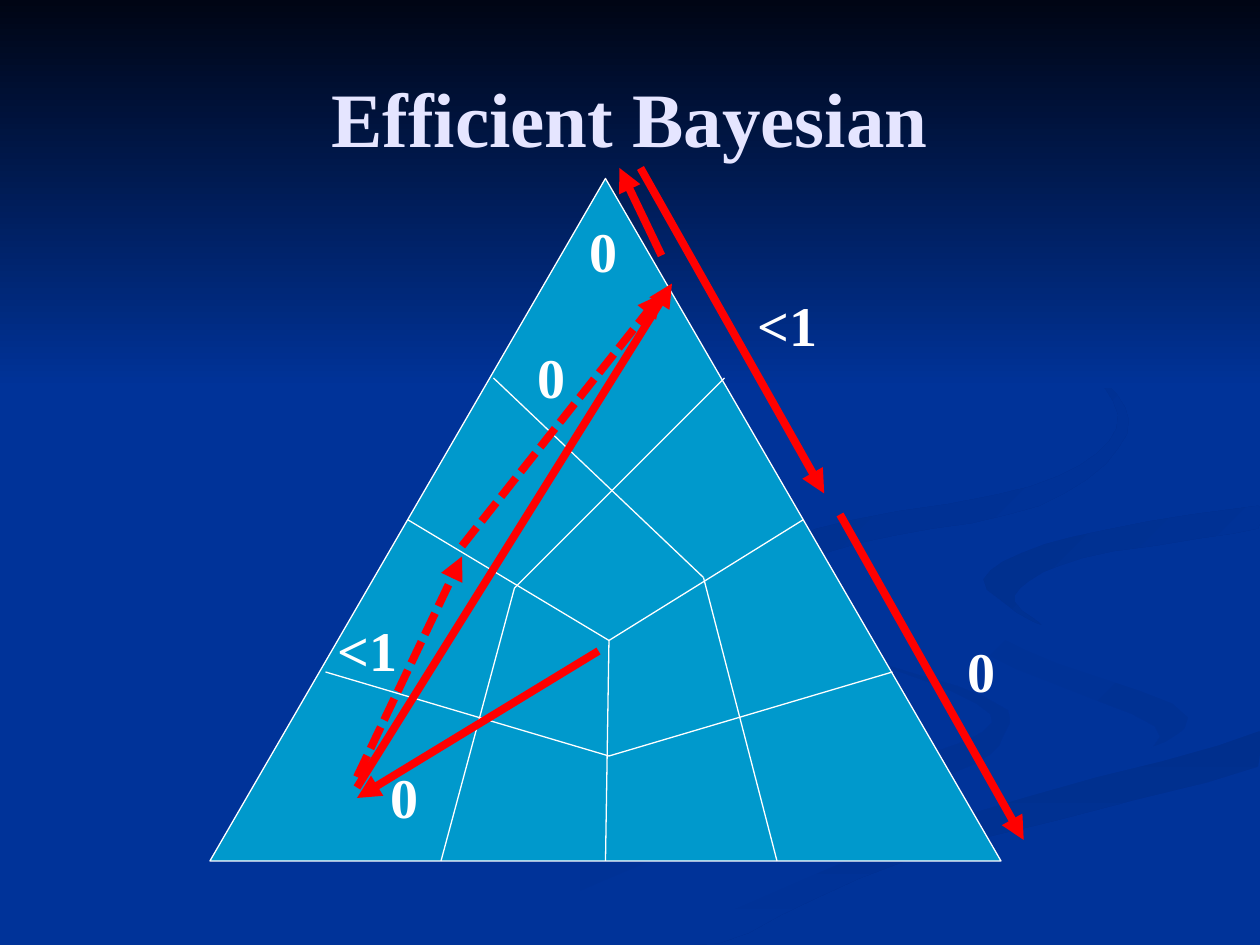
from itertools import pairwise

from lxml import etree
from pptx import Presentation
from pptx.dml.color import RGBColor
from pptx.enum.dml import MSO_LINE
from pptx.enum.shapes import MSO_CONNECTOR, MSO_SHAPE
from pptx.enum.text import MSO_ANCHOR, PP_ALIGN
from pptx.oxml.ns import qn
from pptx.util import Pt

STRAIGHT = MSO_CONNECTOR.STRAIGHT
TRIANGLE = MSO_SHAPE.ISOSCELES_TRIANGLE
RECTANGLE = MSO_SHAPE.RECTANGLE
DASHED = MSO_LINE.SQUARE_DOT
MIDDLE = MSO_ANCHOR.MIDDLE
LEFT, CENTER = PP_ALIGN.LEFT, PP_ALIGN.CENTER

FONT = "Times New Roman"
BLUE = RGBColor(0x00, 0x33, 0x99)
NIGHT = RGBColor(0x00, 0x05, 0x14)
SHADE_LIGHT = RGBColor(0x00, 0x31, 0x93)
SHADE_DARK = RGBColor(0x00, 0x2F, 0x8D)
TEAL = RGBColor(0x00, 0x99, 0xCC)
LAVENDER = RGBColor(0xE5, 0xE5, 0xFF)
WHITE = RGBColor(0xFF, 0xFF, 0xFF)
RED = RGBColor(0xFF, 0x00, 0x00)

# Each ribbon: first colour, last colour, clockwise angle, knots of its outline.
RIBBONS = [
    (BLUE, SHADE_LIGHT, 0, [
        (562, 398), (462, 365), (410, 337), (489, 374), (566, 408), (523, 433),
        (388, 467), (216, 539), (260, 539), (406, 479), (544, 442), (575, 417)]),
    (BLUE, SHADE_LIGHT, 45, [
        (679, 410), (626, 382), (536, 353), (521, 334), (562, 373), (660, 415),
        (644, 436)]),
    (SHADE_DARK, BLUE, 90, [
        (362, 539), (411, 539), (520, 491), (719, 438), (719, 418), (574, 459),
        (454, 499)]),
    (BLUE, BLUE, 0, [
        (522, 334), (585, 371), (679, 410), (607, 445), (446, 492), (343, 539),
        (374, 538), (551, 466), (719, 418), (719, 387), (599, 359), (562, 333),
        (612, 307), (719, 289), (719, 279), (567, 303)]),
    (SHADE_DARK, BLUE, 45, [
        (562, 331), (595, 357), (580, 340), (618, 319), (719, 302), (719, 289),
        (612, 307)]),
    (SHADE_DARK, BLUE, 45, [
        (492, 310), (594, 289), (644, 248), (622, 210), (549, 168), (616, 205),
        (638, 245), (589, 278), (467, 302), (415, 333), (448, 360), (428, 338)]),
]
CURVE_STEPS = 5

# Positions below are relative to the top left of the triangle's box.
CENTRE = (228, 264)
SEAMS = [
    [CENTRE, (339, 195)],
    [CENTRE, (113, 195)],
    [CENTRE, (226, 390)],
    [(294, 114), (174, 234), (132, 390)],
    [(66, 282), (228, 330), (390, 282)],
    [(162, 114), (282, 228), (324, 390)],
]
ARROWS = [
    ((222, 270), (84, 354), None),
    ((84, 342), (144, 216), DASHED),
    ((258, 44), (234, -6), None),
    ((246, -6), (351, 180), None),
    ((360, 192), (465, 378), None),
    ((144, 210), (258, 66), DASHED),
    ((84, 348), (264, 60), None),
]
LABELS = [
    ("0", 96, 330), ("0", 180, 90), ("<1", 66, 246),
    ("0", 210, 18), ("<1", 306, 60), ("0", 426, 258),
]
LABEL_WIDTHS = {"0": 31, "<1": 49}


def smooth_outline(knots, limits):
    """Closed Catmull-Rom curve through the knots, kept within the limits."""
    def blend(a, b, c, d, t):
        return b + t * (c - a + t * (2*a - 5*b + 4*c - d + t * (3*b - a - 3*c + d))) / 2

    points = []
    for index in range(len(knots)):
        near = [knots[(index + shift) % len(knots)] for shift in (-1, 0, 1, 2)]
        for step in range(CURVE_STEPS):
            points.append(tuple(
                min(limit, blend(*axis, step / CURVE_STEPS))
                for axis, limit in zip(zip(*near), limits)))
    return points


def paint(shape, first, last, angle):
    """Fill without outline; the angle runs clockwise from left to right."""
    shape.shadow.inherit = False
    shape.line.fill.background()
    if first == last:
        shape.fill.solid()
        shape.fill.fore_color.rgb = first
        return
    shape.fill.gradient()
    shape.fill.gradient_angle = -angle % 360
    for position, colour in enumerate((first, last)):
        stop = shape.fill.gradient_stops[position]
        stop.color.rgb = colour
        stop.position = position


def add_backdrop(page, left, top, width, height):
    page.background.fill.solid()
    page.background.fill.fore_color.rgb = BLUE
    for first, last, angle, knots in RIBBONS:
        outline = smooth_outline(knots, (width, height))
        points = [(left + x, top + y) for x, y in outline]
        builder = page.shapes.build_freeform(*points[0], scale=Pt(1))
        builder.add_line_segments(points[1:], close=True)
        paint(builder.convert_to_shape(), first, last, angle)
    sky = page.shapes.add_shape(RECTANGLE, Pt(left), Pt(top), Pt(width), Pt(222))
    paint(sky, NIGHT, BLUE, 90)


def add_text(page, text, left, top, width, height, size, colour, align, wrap):
    box = page.shapes.add_textbox(Pt(left), Pt(top), Pt(width), Pt(height))
    box.text_frame.word_wrap = wrap
    box.text_frame.vertical_anchor = MIDDLE
    para = box.text_frame.paragraphs[0]
    para.alignment = align
    span = para.add_run()
    span.text = text
    span.font.name = FONT
    span.font.size = Pt(size)
    span.font.bold = True
    span.font.color.rgb = colour


def add_line(page, left, top, start, end, colour, weight):
    line = page.shapes.add_connector(
        STRAIGHT, Pt(left + start[0]), Pt(top + start[1]),
        Pt(left + end[0]), Pt(top + end[1]))
    line.line.color.rgb = colour
    line.line.width = Pt(weight)
    etree.SubElement(line._element.spPr, qn("a:effectLst"))
    return line


def add_arrow(page, left, top, start, end, dash):
    arrow = add_line(page, left, top, start, end, RED, 4.5)
    if dash:
        arrow.line.dash_style = dash
    etree.SubElement(arrow.line._get_or_add_ln(), qn("a:tailEnd"), type="triangle")


def add_simplex(page, left, top, width, height):
    """Triangle divided by seams, with labelled arrows across it."""
    triangle = page.shapes.add_shape(TRIANGLE, Pt(left), Pt(top), Pt(width), Pt(height))
    paint(triangle, TEAL, TEAL, 0)
    triangle.line.color.rgb = WHITE
    triangle.line.width = Pt(0.75)
    for seam in SEAMS:
        for start, end in pairwise(seam):
            add_line(page, left, top, start, end, WHITE, 0.75)
    for start, end, dash in ARROWS:
        add_arrow(page, left, top, start, end, dash)
    for text, x, y in LABELS:
        add_text(page, text, left + x, top + y, LABEL_WIDTHS[text], 46, 32, WHITE, LEFT, False)


def main():
    deck = Presentation()
    deck.slide_width, deck.slide_height = Pt(720), Pt(540)
    page = deck.slides.add_slide(deck.slide_layouts[6])
    add_backdrop(page, 0, 0, 720, 540)
    add_text(page, "Efficient Bayesian", 36, 21.6, 648, 90, 44, LAVENDER, CENTER, True)
    add_simplex(page, 120, 102, 452, 390)
    deck.save("out.pptx")


if __name__ == "__main__":
    main()
